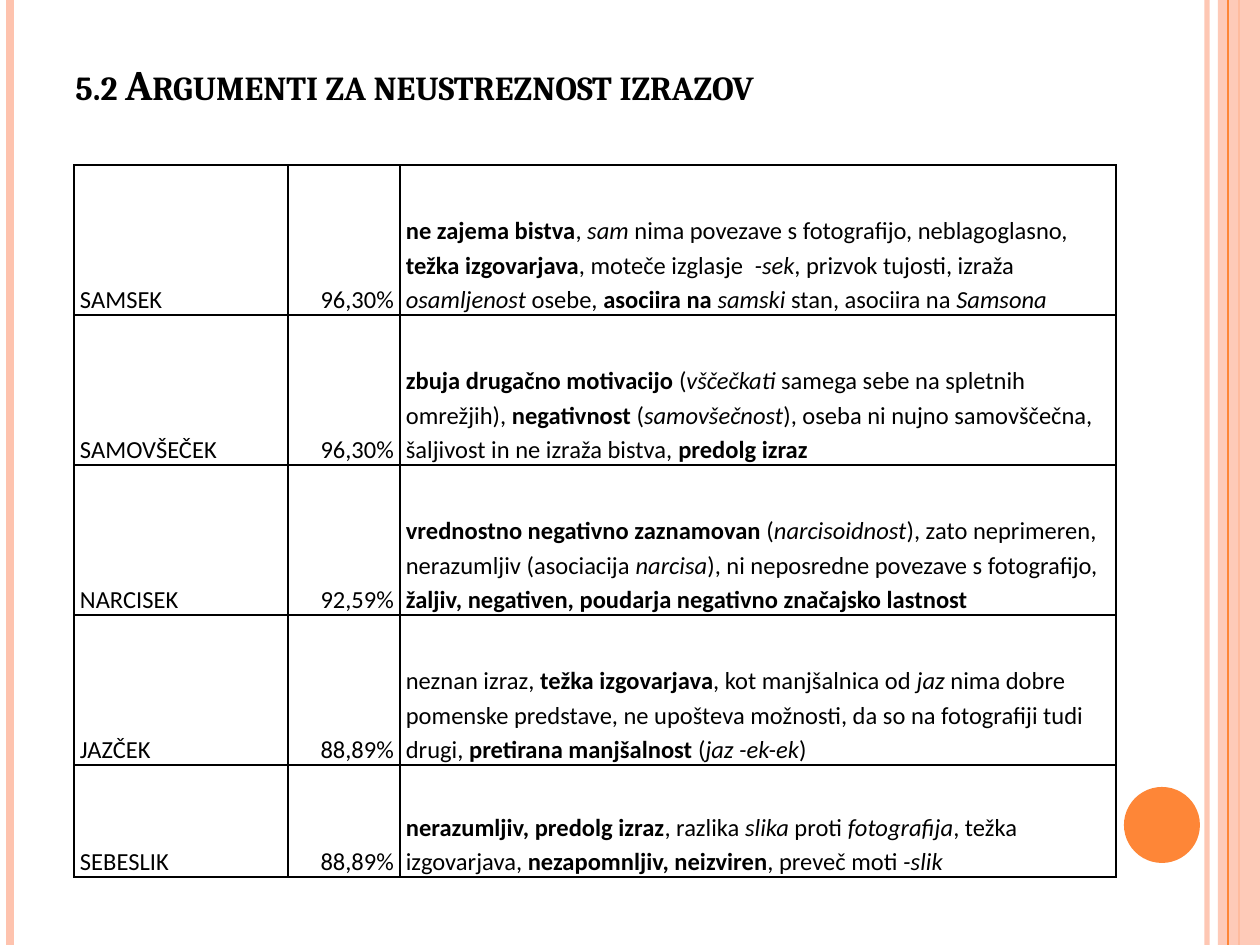
from dataclasses import dataclass

from lxml import etree
from pptx import Presentation, util as u
from pptx.dml.color import RGBColor as Rgb
from pptx.enum import shapes as sh, text as tx
from pptx.oxml import ns

PX = u.Inches(1) / 126


@dataclass(frozen=True)
class Theme:
    ink: str = "000000"
    pink: str = "FEC3AE"
    orange: str = "FE8637"
    head: str = "Cambria"
    body: str = "Calibri"
    big: int = 24
    small: int = 14


@dataclass(frozen=True)
class Stripe:
    x: int
    color: str
    width: float
    alpha: int = 100


@dataclass(frozen=True)
class Block:
    kind: sh.MSO_SHAPE
    box: tuple[int, int, int, int]
    color: str
    alpha: int = 100


@dataclass(frozen=True)
class Term:
    name: str
    share: str
    why: str
    height: int = 150


T = Theme()
COLS = (214, 112, 716)
BACK = (
    Stripe(1207, T.pink, 3, 93),
    Stripe(10, T.pink, 4.5),
    Stripe(1239, T.orange, 1.5),
    Block(sh.MSO_SHAPE.RECTANGLE, (1218, 0, 42, 945), T.pink, 87),
    Stripe(1228, T.orange, 0.75),
    Block(sh.MSO_SHAPE.OVAL, (1124, 787, 76, 76), T.orange),
)
# In each reason, * marks bold and _ marks italic.
TERMS = (
    Term("SAMSEK", "96,30%",
         "*ne zajema bistva*, _sam_ nima povezave s fotografijo, neblagoglasno, "
         "*težka izgovarjava*, moteče izglasje  _-sek_, prizvok tujosti, izraža "
         "_osamljenost_ osebe, *asociira na *_samski_ stan, asociira na _Samsona_"),
    Term("SAMOVŠEČEK", "96,30%",
         "*zbuja drugačno motivacijo *(_vščečkati_ samega sebe na spletnih "
         "omrežjih), *negativnost* (_samovšečnost_), oseba ni nujno samovščečna, "
         "šaljivost in ne izraža bistva, *predolg izraz*"),
    Term("NARCISEK", "92,59%",
         "*vrednostno negativno zaznamovan *(_narcisoidnost_), zato neprimeren, "
         "nerazumljiv (asociacija _narcisa_), ni neposredne povezave s fotografijo, "
         "*žaljiv, negativen, poudarja negativno značajsko lastnost*"),
    Term("JAZČEK", "88,89%",
         "neznan izraz, *težka izgovarjava*, kot manjšalnica od _jaz_ nima dobre "
         "pomenske predstave, ne upošteva možnosti, da so na fotografiji tudi "
         "drugi, *pretirana manjšalnost *(_jaz -ek-ek_)"),
    Term("SEBESLIK", "88,89%",
         "*nerazumljiv, predolg izraz*, razlika _slika_ proti _fotografija_, težka "
         "izgovarjava, *nezapomnljiv, neizviren*, preveč moti _-slik_", 112),
)


def px(n: int) -> int:
    return round(n * PX)


def fade(node, alpha: int) -> None:
    if alpha < 100:
        for tint in node.iter(ns.qn("a:srgbClr")):
            etree.SubElement(tint, ns.qn("a:alpha"), val=str(alpha * 1000))


def stripe(slide, s: Stripe) -> None:
    x = px(s.x)
    line = slide.shapes.add_connector(sh.MSO_CONNECTOR.STRAIGHT, x, 0, x, px(945))
    line.line.color.rgb = Rgb.from_string(s.color)
    line.line.width = u.Pt(s.width)
    props = line._element.spPr
    fade(props, s.alpha)
    etree.SubElement(props, ns.qn("a:effectLst"))


def block(slide, b: Block) -> None:
    form = slide.shapes.add_shape(b.kind, *map(px, b.box))
    form.shadow.inherit = False
    form.fill.solid()
    form.fill.fore_color.rgb = Rgb.from_string(b.color)
    form.line.fill.background()
    fade(form._element.spPr, b.alpha)


def style(para, face: str, size: int) -> None:
    para.font.name = face
    para.font.size = u.Pt(size)
    para.font.color.rgb = Rgb.from_string(T.ink)


def title(slide, words: str) -> None:
    frame = slide.shapes.add_textbox(*map(px, (63, 38, 1029, 77))).text_frame
    frame.word_wrap = True
    frame.vertical_anchor = tx.MSO_ANCHOR.BOTTOM
    para = frame.paragraphs[0]
    run = para.add_run()
    run.text = words
    style(para, T.head, T.big)
    para.font.bold = True
    run._r.get_or_add_rPr().set("cap", "small")


def write(para, words: str) -> None:
    for i, part in enumerate(words.split("*")):
        for j, bit in enumerate(part.split("_")):
            if bit:
                run = para.add_run()
                run.text = bit
                if i % 2:
                    run.font.bold = True
                if j % 2:
                    run.font.italic = True


def border(cell) -> None:
    props = cell._tc.get_or_add_tcPr()
    for i, side in enumerate(("lnL", "lnR", "lnT", "lnB")):
        line = etree.Element(ns.qn(f"a:{side}"), w=str(u.Pt(1)))
        fill = etree.SubElement(line, ns.qn("a:solidFill"))
        etree.SubElement(fill, ns.qn("a:srgbClr"), val=T.ink)
        props.insert(i, line)


def fill(cell, words: str, right: bool) -> None:
    cell.fill.background()
    border(cell)
    cell.vertical_anchor = tx.MSO_ANCHOR.BOTTOM
    cell.margin_left = cell.margin_right = px(6)
    cell.margin_top = cell.margin_bottom = 0
    para = cell.text_frame.paragraphs[0]
    para.line_spacing = 1.15
    if right:
        para.alignment = tx.PP_ALIGN.RIGHT
    style(para, T.body, T.small)
    write(para, words)


def table(slide, terms: tuple[Term, ...]) -> None:
    box = (74, 165, sum(COLS), sum(t.height for t in terms))
    grid = slide.shapes.add_table(len(terms), len(COLS), *map(px, box)).table
    grid.first_row = grid.horz_banding = False
    for col, wide in zip(grid.columns, COLS):
        col.width = px(wide)
    for row, term in zip(grid.rows, terms):
        row.height = px(term.height)
        for i, words in enumerate((term.name, term.share, term.why)):
            fill(row.cells[i], words, i == 1)


def main() -> None:
    deck = Presentation()
    deck.slide_width, deck.slide_height = px(1260), px(945)
    slide = deck.slides.add_slide(deck.slide_layouts[6])
    for item in BACK:
        if isinstance(item, Stripe):
            stripe(slide, item)
        else:
            block(slide, item)
    title(slide, "5.2 Argumenti za neustreznost izrazov")
    table(slide, TERMS)
    deck.save("out.pptx")


if __name__ == "__main__":
    main()
